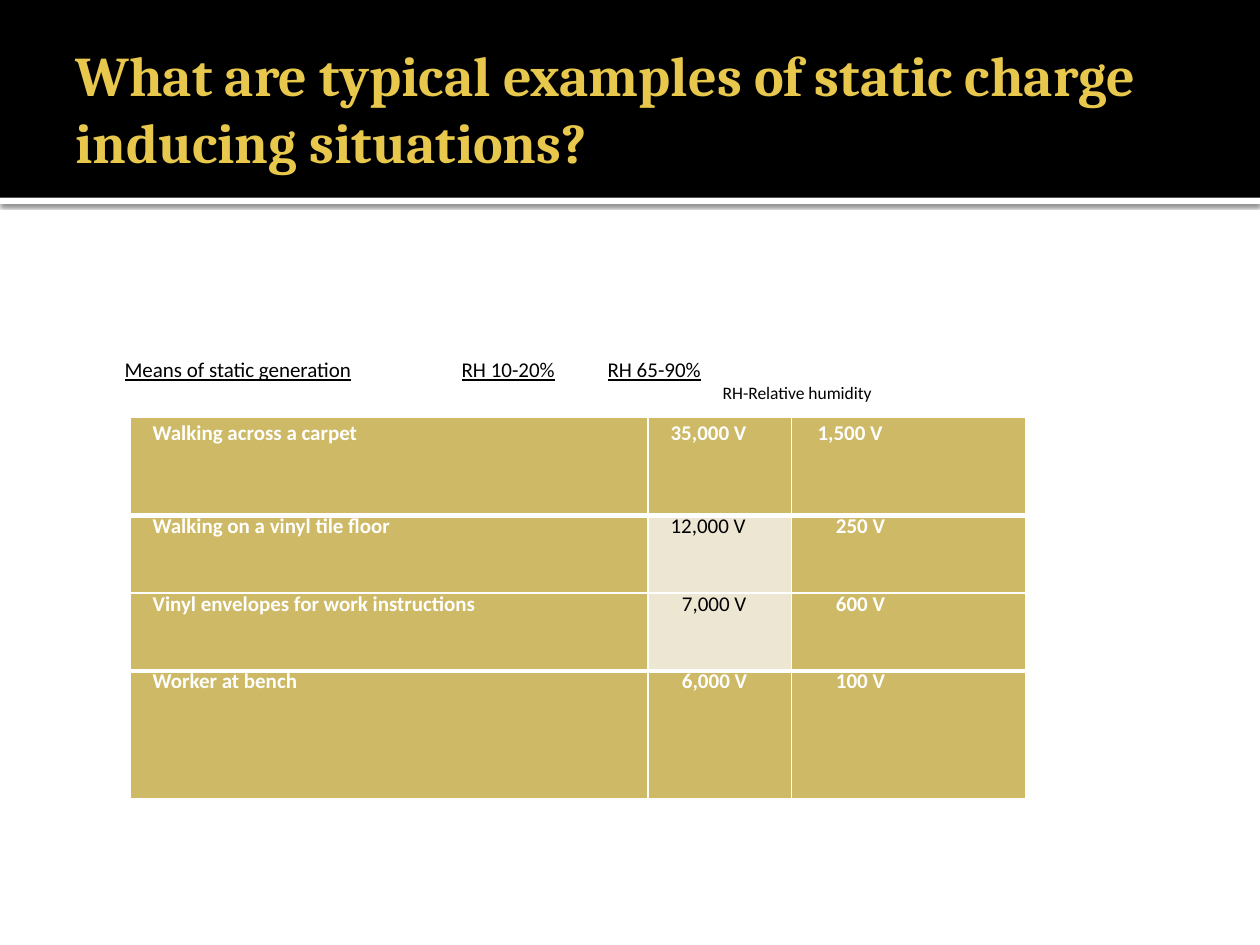
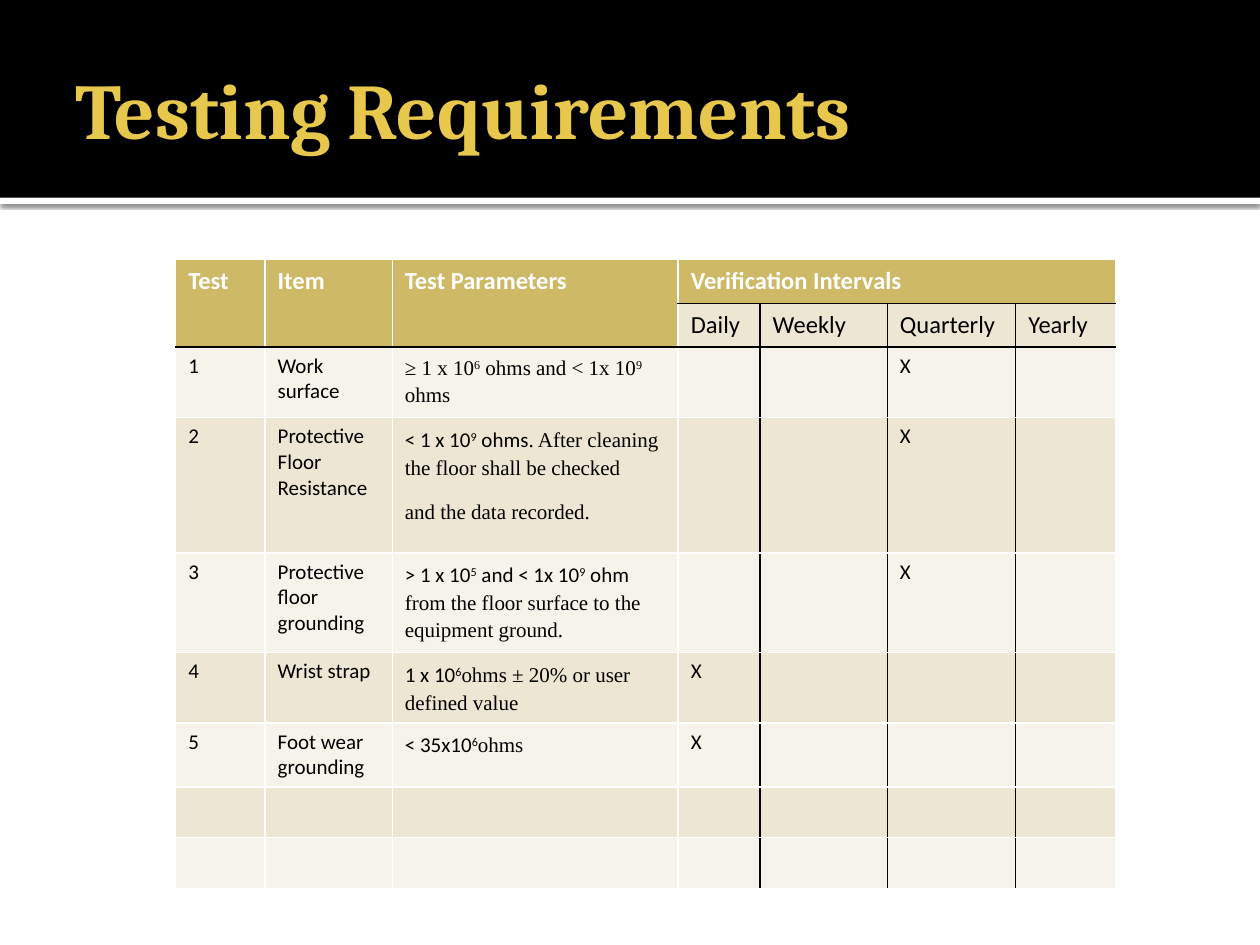
import pptx
import pptx.util
import pptx.dml.color
import pptx.enum.shapes
import pptx.enum.text
import pptx.oxml
import pptx.oxml.ns

Pt = pptx.util.Pt
RGB = pptx.dml.color.RGBColor.from_string
NS = pptx.oxml.ns.nsdecls("a")
COLORS = {"black": "000000", "white": "FFFFFF", "title": "E8C84C",
          "gold": "CEB966", "sand": "EDE6D3", "cream": "F6F3EA"}
BODY, HEAD, SERIF = "Calibri", "Cambria", "Times New Roman"

prs = pptx.Presentation()
prs.slide_width, prs.slide_height = Pt(720), Pt(540)


def style_cell(cell, fill, lines):
    tcPr = cell._tc.get_or_add_tcPr()
    for side, (color, width) in zip("LRTB", lines):
        tcPr.append(pptx.oxml.parse_xml(
            f'<a:ln{side} {NS} w="{Pt(width)}"><a:solidFill>'
            f'<a:srgbClr val="{COLORS[color]}"/></a:solidFill></a:ln{side}>'))
    cell.fill.solid()
    cell.fill.fore_color.rgb = RGB(COLORS[fill])


def set_font(font, size, color, bold=False, name=BODY):
    font.name, font.size, font.bold = name, Pt(size), bold
    font.color.rgb = RGB(COLORS[color])


slides = []
for title, size in [
    ("What are typical examples of static charge inducing situations?", 32),
    ("Testing Requirements", 45),
]:
    s = prs.slides.add_slide(prs.slide_layouts[6])
    slides.append(s)
    for color, top, height in [("white", 113, 3.6), ("black", 0, 113)]:
        sp = s.shapes.add_shape(pptx.enum.shapes.MSO_SHAPE.RECTANGLE,
                                0, Pt(top), Pt(720), Pt(height))
        sp.shadow.inherit = False
        sp.fill.solid()
        sp.fill.fore_color.rgb = RGB(COLORS[color])
        sp.line.fill.background()
        if color == "white":
            effects = sp._element.spPr.find(pptx.oxml.ns.qn("a:effectLst"))
            effects.append(pptx.oxml.parse_xml(
                f'<a:outerShdw {NS} blurRad="{Pt(2.5)}" dist="{Pt(0.8)}" dir="5400000">'
                f'<a:srgbClr val="{COLORS["black"]}"><a:alpha val="60000"/></a:srgbClr>'
                '</a:outerShdw>'))
    tf = s.shapes.add_textbox(Pt(36), Pt(12.2), Pt(648), Pt(98.6)).text_frame
    tf.word_wrap = True
    tf.vertical_anchor = pptx.enum.text.MSO_ANCHOR.MIDDLE
    tf.margin_right = Pt(3.6)
    p = tf.paragraphs[0]
    p.text = title
    set_font(p.font, size, "title", True, HEAD)

charge_rows = [
    (56.2, [("Walking across a carpet", 13), ("35,000 V", 13), ("1,500 V", 15)]),
    (44.5, [("Walking on a vinyl tile floor", 13), ("12,000 V", 13), ("250 V", 25.5)]),
    (44.5, [("Vinyl envelopes for work instructions", 13), ("7,000 V", 19.5), ("600 V", 25.5)]),
    (72.8, [("Worker at bench", 13), ("6,000 V", 19.5), ("100 V", 25.5)]),
]
last = len(charge_rows) - 1
table = slides[0].shapes.add_table(4, 3, Pt(74.2), Pt(238.3), Pt(512), Pt(218)).table
table.first_row = table.horz_banding = False
for column, width in zip(table.columns, (296, 82, 134)):
    column.width = Pt(width)
for i, (height, entries) in enumerate(charge_rows):
    table.rows[i].height = Pt(height)
    for j, (text, indent) in enumerate(entries):
        cell = table.cell(i, j)
        plain = j == 1 and 0 < i < last
        thin, thick = ("white", 1), ("white", 3)
        style_cell(cell, "sand" if plain else "gold",
                   [thin, thin, thick if i in (1, last) else thin,
                    thick if i in (0, last - 1) else thin])
        cell.margin_left = cell.margin_right = cell.margin_top = cell.margin_bottom = 0
        p = cell.text_frame.paragraphs[0]
        p.text = text
        p._p.get_or_add_pPr().set("marL", str(Pt(indent)))
        p.line_spacing = Pt(13.4) if i else 1.15
        p.space_before = Pt(0 if i else 3.5)
        set_font(p.font, 12, "black" if plain else "white", not plain)

tf = slides[0].shapes.add_textbox(Pt(64.1), Pt(200.2), Pt(474.5), Pt(33.8)).text_frame
tf.word_wrap = True
tf.vertical_anchor = pptx.enum.text.MSO_ANCHOR.MIDDLE
p = tf.paragraphs[0]
for text in ("Means of static generation", "\t", "RH 10-20%", "\t", "RH 65-90%"):
    r = p.add_run()
    r.text = text
    r.font.underline = text != "\t"
set_font(p.font, 12, "black")
for r in p.runs:
    set_font(r.font, 12, "black")
p._p.get_or_add_pPr().insert(0, pptx.oxml.parse_xml(
    f'<a:tabLst {NS}><a:tab pos="{Pt(192.6)}" algn="l"/>'
    f'<a:tab pos="{Pt(276)}" algn="l"/></a:tabLst>'))
p = tf.add_paragraph()
p.text = "RH-Relative humidity"
p._p.get_or_add_pPr().set("marL", str(Pt(341.8)))
set_font(p.font, 10, "black")

DAILY, QUARTERLY = 3, 5
tests = [
    ("Work surface", QUARTERLY,
     [[(SERIF, "≥ 1 x 10^6^ ohms and < 1x 10^9^ ohms")]]),
    ("Protective Floor Resistance", QUARTERLY,
     [[(BODY, "< 1 x 10^9^ ohms"), (SERIF, ". After cleaning the floor shall be checked")],
      [(SERIF, "and the data recorded.")]]),
    ("Protective floor grounding", QUARTERLY,
     [[(BODY, "> 1 x 10^5^ and < 1x 10^9^ ohm "),
       (SERIF, "from the floor surface to the equipment ground.")]]),
    ("Wrist strap", DAILY,
     [[(BODY, "1 x 10^6^"), (SERIF, "ohms ± 20% or user defined value")]]),
    ("Foot wear grounding", DAILY,
     [[(BODY, "< 35x10^6^"), (SERIF, "ohms")]]),
]
heights = (25, 25, 39.4, 77.2, 54.8, 39, 36.6, 29, 29)
widths = (51.1, 72.7, 163.4, 46.8, 72.7, 73.4, 56.9)
table = slides[1].shapes.add_table(9, 7, Pt(100.4), Pt(148.4), Pt(537), Pt(355)).table
table.first_row = table.horz_banding = False
for column, width in zip(table.columns, widths):
    column.width = Pt(width)
for i, height in enumerate(heights):
    table.rows[i].height = Pt(height)
    for j in range(len(widths)):
        interval = j >= DAILY
        if i == 0 or (i == 1 and not interval):
            fill = "gold"
        else:
            fill = "sand" if i % 2 else "cream"
        black = [i > 0 and j > DAILY,
                 i > 0 and DAILY <= j < len(widths) - 1,
                 i == 2 or (i == 1 and interval),
                 i == 1 or (i == 0 and interval)]
        style_cell(table.cell(i, j), fill,
                   [("black" if b else "white", 1) for b in black])
for j in range(DAILY):
    table.cell(0, j).merge(table.cell(1, j))
table.cell(0, DAILY).merge(table.cell(0, 6))

entries = [(0, j, text, 14, "white", True) for j, text in
           enumerate(("Test", "Item", "Test Parameters", "Verification Intervals"))]
entries += [(1, j, text, 14, "black", False) for j, text in
            enumerate(("Daily", "Weekly", "Quarterly", "Yearly"), DAILY)]
for i, (item, interval, paragraphs) in enumerate(tests, 2):
    entries += [(i, j, text, 12, "black", False)
                for j, text in ((0, str(i - 1)), (1, item), (interval, "X"))]
    tf = table.cell(i, 2).text_frame
    for k, segments in enumerate(paragraphs):
        p = tf.add_paragraph() if k else tf.paragraphs[0]
        p.line_spacing = 1.15
        if i == 2:
            p.space_before = Pt(2.1)
        else:
            p.space_after = Pt(10)
        for name, text in segments:
            for n, part in enumerate(text.split("^")):
                if part:
                    r = p.add_run()
                    r.text = part
                    set_font(r.font, 12, "black", name=name)
                    if n % 2:
                        r._r.get_or_add_rPr().set("baseline", "30000")
for i, j, text, size, color, bold in entries:
    p = table.cell(i, j).text_frame.paragraphs[0]
    p.text = text
    set_font(p.font, size, color, bold)

prs.save("out.pptx")
